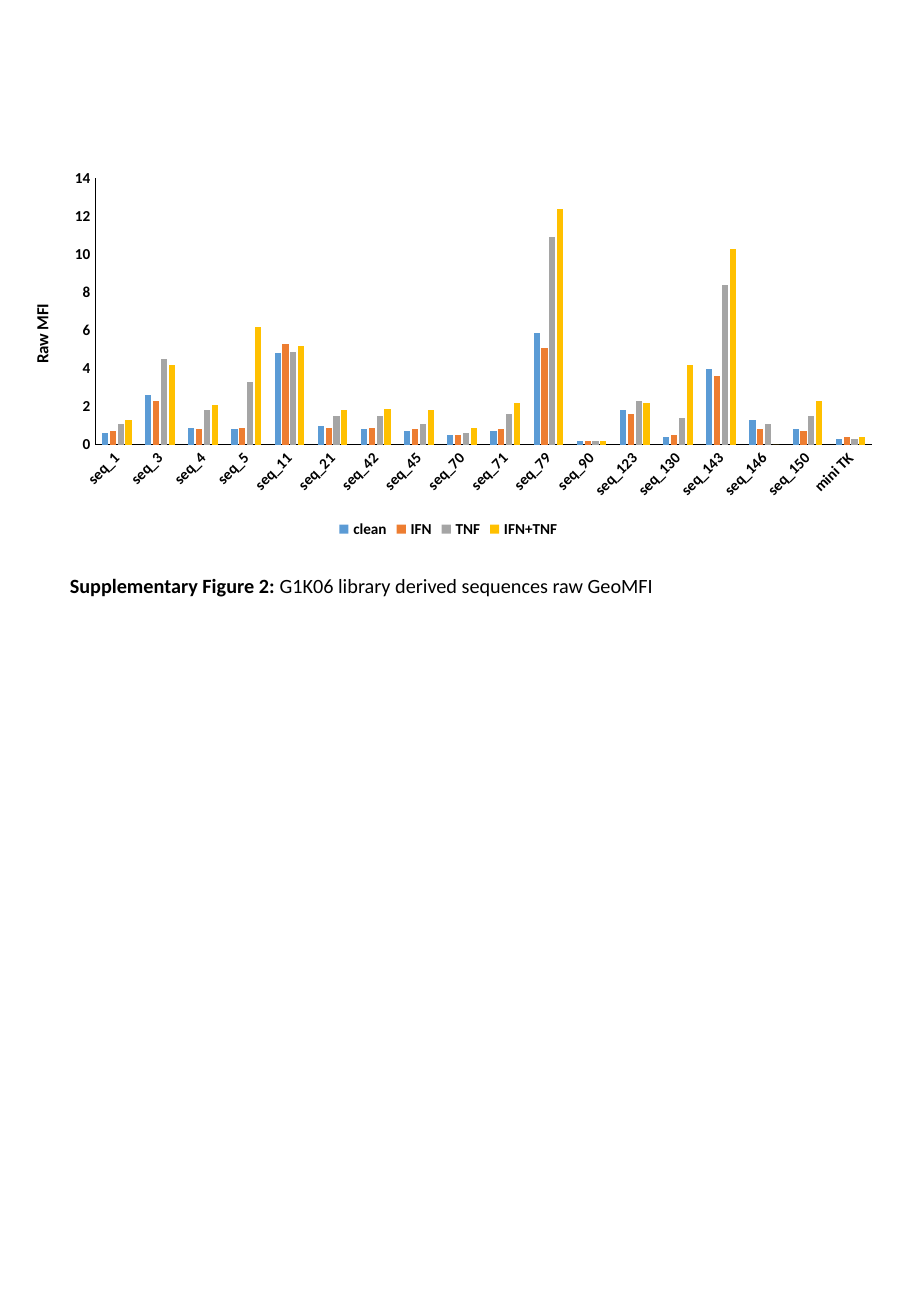
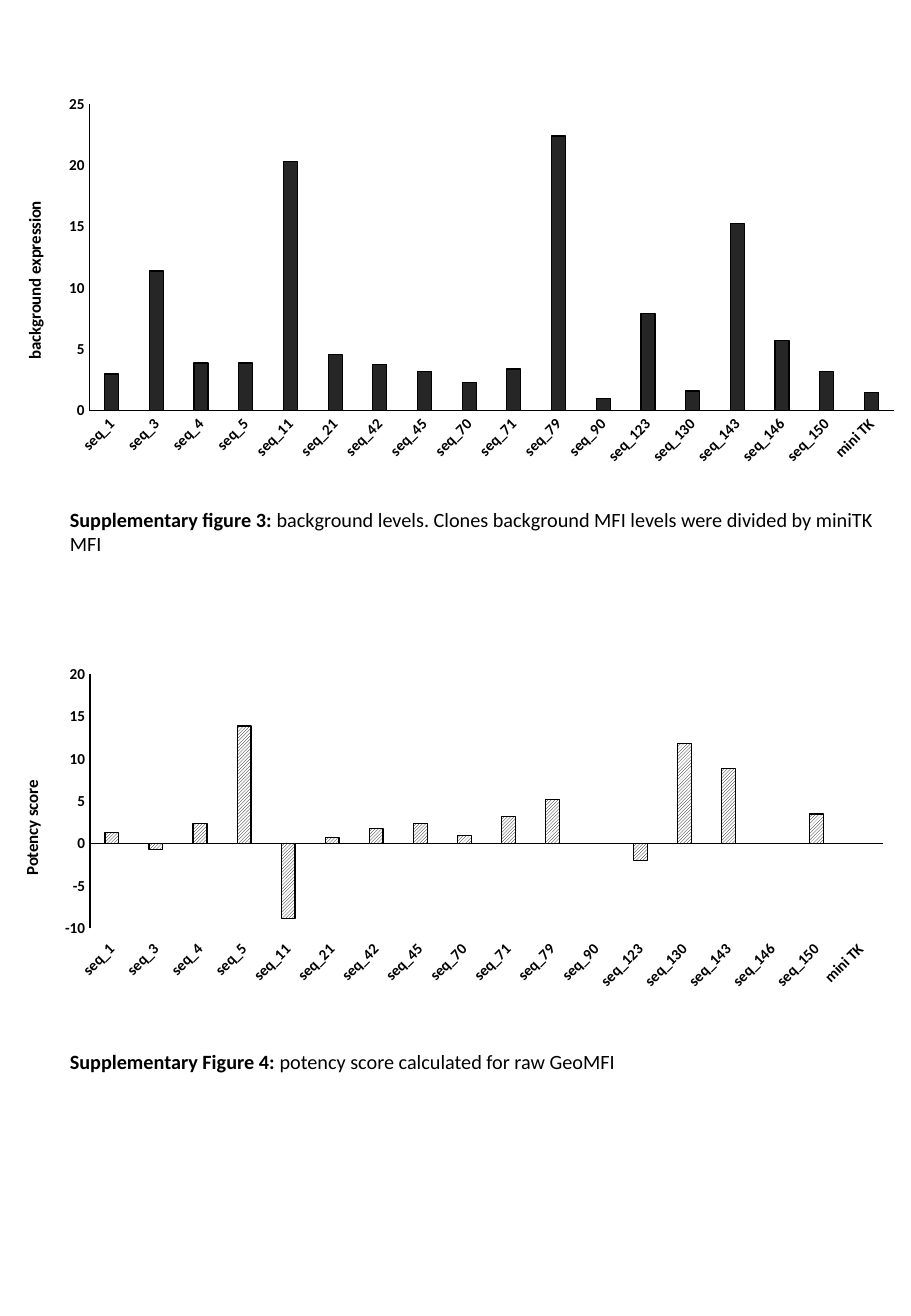
"""Build two pages of supplementary figures: clustered column charts with captions."""
from dataclasses import dataclass
from typing import Optional

from lxml import etree
from pptx import Presentation
from pptx import util as u
from pptx.chart.data import CategoryChartData
from pptx.dml.color import RGBColor
from pptx.enum import chart as charts
from pptx.enum import dml, text
from pptx.oxml.ns import qn

FONT = "Calibri"
COLOURS = {
    "ink": "000000",
    "paper": "FFFFFF",
    "charcoal": "262626",
    "blue": "5B9BD5",
    "orange": "ED7D31",
    "grey": "A5A5A5",
    "gold": "FFC000",
}
CLONES = [f"seq_{n}" for n in (1, 3, 4, 5, 11, 21, 42, 45, 70, 71, 79, 90, 123, 130, 143, 146, 150)]
CATEGORIES = CLONES + ["mini TK"]
CAPTION_LEFT = 1.21
TICK_SIZE = 9
AXIS_TITLE_SIZE = 10
CAPTION_SIZE = 12


@dataclass(frozen=True)
class Frame:
    left: float
    top: float
    width: float = 0
    height: float = 0

    def lengths(self) -> list:
        return [u.Cm(v) for v in (self.left, self.top, self.width, self.height)]


@dataclass(frozen=True)
class Series:
    name: str
    values: tuple
    colour: str
    outlined: bool = False
    hatched: bool = False


@dataclass(frozen=True)
class Scale:
    low: float
    high: float
    step: float


@dataclass(frozen=True)
class Figure:
    label: str
    caption: str
    caption_frame: Frame
    chart_frame: Frame
    plot_frame: Frame
    axis_title: str
    title_frame: Frame
    scale: Scale
    series: tuple
    legend: bool = False
    labels_low: bool = False


PAGES = [
    [
        Figure(
            "Supplementary Figure 2: ", "G1K06 library derived sequences raw GeoMFI",
            Frame(CAPTION_LEFT, 11.87, 13.72, 0.76),
            Frame(0.14, 3.37, 18.47, 7.98), Frame(1.99, 3.73, 16.25, 5.57),
            "Raw MFI", Frame(0.59, 6.29), Scale(0, 14, 2),
            (
                Series("clean", (0.6, 2.6, 0.9, 0.8, 4.8, 1, 0.8, 0.7, 0.5, 0.7, 5.9, 0.2,
                                 1.8, 0.4, 4, 1.3, 0.8, 0.3), "blue"),
                Series("IFN", (0.7, 2.3, 0.8, 0.9, 5.3, 0.9, 0.9, 0.8, 0.5, 0.8, 5.1, 0.2,
                               1.6, 0.5, 3.6, 0.8, 0.7, 0.4), "orange"),
                Series("TNF", (1.1, 4.5, 1.8, 3.3, 4.9, 1.5, 1.5, 1.1, 0.6, 1.6, 10.9, 0.2,
                               2.3, 1.4, 8.4, 1.1, 1.5, 0.3), "grey"),
                Series("IFN+TNF", (1.3, 4.2, 2.1, 6.2, 5.2, 1.8, 1.9, 1.8, 0.9, 2.2, 12.4, 0.2,
                                   2.2, 4.2, 10.3, 0, 2.3, 0.4), "gold"),
            ),
            legend=True,
        ),
    ],
    [
        Figure(
            "Supplementary figure 3: ",
            "background levels. Clones background MFI levels were divided by miniTK MFI",
            Frame(CAPTION_LEFT, 10.48, 17.4, 1.27),
            Frame(0, 1.83, 19.05, 8.08), Frame(1.87, 2.18, 16.82, 6.41),
            "background expression", Frame(0.43, 4.14), Scale(0, 25, 5),
            (
                Series("Series 1", (3, 11.4, 3.9, 3.9, 20.3, 4.6, 3.8, 3.2, 2.3, 3.4, 22.4, 1,
                                    7.9, 1.6, 15.3, 5.7, 3.2, 1.5), "charcoal", outlined=True),
            ),
        ),
        Figure(
            "Supplementary Figure 4: ", "potency score calculated for raw GeoMFI",
            Frame(CAPTION_LEFT, 21.82, 15.09, 0.76),
            Frame(-0.08, 13.77, 18.9, 7.06), Frame(1.88, 14.1, 16.58, 5.31),
            "Potency score", Frame(0.37, 16.25), Scale(-10, 20, 5),
            (
                Series("Series 1", (1.3, -0.7, 2.4, 13.9, -8.8, 0.7, 1.8, 2.4, 1, 3.2, 5.2, 0,
                                    -2, 11.8, 8.9, 0, 3.5, 0), "ink", outlined=True, hatched=True),
            ),
            labels_low=True,
        ),
    ],
]


def colour(name: str) -> RGBColor:
    return RGBColor.from_string(COLOURS[name])


def format_font(font, size: float, bold: bool = True) -> None:
    font.name = FONT
    font.size = u.Pt(size)
    font.bold = bold
    font.color.rgb = colour("ink")


def format_line(line) -> None:
    line.color.rgb = colour("ink")
    line.width = u.Pt(0.75)


def add_span(para, words: str, *, size: float, bold: bool) -> None:
    span = para.add_run()
    span.text = words
    format_font(span.font, size, bold)


def add_caption(page, figure: Figure) -> None:
    box = page.shapes.add_textbox(*figure.caption_frame.lengths())
    box.text_frame.word_wrap = True
    box.text_frame.auto_size = text.MSO_AUTO_SIZE.SHAPE_TO_FIT_TEXT
    para = box.text_frame.paragraphs[0]
    add_span(para, figure.label, size=CAPTION_SIZE, bold=True)
    add_span(para, figure.caption, size=CAPTION_SIZE, bold=False)


def place(parent, index: int, frame: Frame, within: Frame, target: Optional[str] = None) -> None:
    for old in parent.findall(qn("c:layout")):
        parent.remove(old)
    layout = etree.Element(qn("c:layout"))
    manual = etree.SubElement(layout, qn("c:manualLayout"))
    settings = {"layoutTarget": target} if target else {}
    settings |= {"xMode": "edge", "yMode": "edge"}
    settings["x"] = (frame.left - within.left) / within.width
    settings["y"] = (frame.top - within.top) / within.height
    if frame.width:
        settings["w"] = frame.width / within.width
        settings["h"] = frame.height / within.height
    for tag, value in settings.items():
        etree.SubElement(manual, qn(f"c:{tag}")).set("val", str(value))
    parent.insert(index, layout)


def rotate(body, degrees: int) -> None:
    body.set("rot", str(degrees * 60000))
    body.set("vert", "horz")


def format_axes(chart, figure: Figure) -> None:
    for axis in (chart.category_axis, chart.value_axis):
        axis.has_major_gridlines = False
        axis.major_tick_mark = axis.minor_tick_mark = charts.XL_TICK_MARK.NONE
        format_font(axis.tick_labels.font, TICK_SIZE)
        format_line(axis.format.line)
    if figure.labels_low:
        chart.category_axis.tick_label_position = charts.XL_TICK_LABEL_POSITION.LOW
    rotate(chart.element.xpath(".//c:catAx/c:txPr/a:bodyPr")[0], -45)

    axis = chart.value_axis
    axis.minimum_scale = figure.scale.low
    axis.maximum_scale = figure.scale.high
    axis.major_unit = figure.scale.step
    para = axis.axis_title.text_frame.paragraphs[0]
    add_span(para, figure.axis_title, size=AXIS_TITLE_SIZE, bold=True)
    title = chart.element.xpath(".//c:valAx/c:title")[0]
    rotate(title.xpath(".//a:bodyPr")[0], -90)
    place(title, 1, figure.title_frame, figure.chart_frame)


def format_series(columns, series: Series) -> None:
    columns.invert_if_negative = False
    fill = columns.format.fill
    if series.hatched:
        fill.patterned()
        fill.pattern = dml.MSO_PATTERN.LIGHT_UPWARD_DIAGONAL
        fill.fore_color.rgb = colour(series.colour)
        fill.back_color.rgb = colour("paper")
    else:
        fill.solid()
        fill.fore_color.rgb = colour(series.colour)
    if series.outlined:
        format_line(columns.format.line)
    else:
        columns.format.line.fill.background()


def add_column_chart(page, figure: Figure) -> None:
    data = CategoryChartData()
    data.categories = CATEGORIES
    for series in figure.series:
        data.add_series(series.name, series.values)
    chart = page.shapes.add_chart(
        charts.XL_CHART_TYPE.COLUMN_CLUSTERED, *figure.chart_frame.lengths(), data
    ).chart
    chart.has_title = False
    format_font(chart.font, AXIS_TITLE_SIZE)
    chart.has_legend = figure.legend
    if figure.legend:
        chart.legend.position = charts.XL_LEGEND_POSITION.BOTTOM
        chart.legend.include_in_layout = False
        format_font(chart.legend.font, TICK_SIZE)
    plot = chart.plots[0]
    plot.gap_width = 219
    plot.overlap = -27
    plot.vary_by_categories = False
    for columns, series in zip(plot.series, figure.series):
        format_series(columns, series)
    format_axes(chart, figure)
    area = chart.element.xpath(".//c:plotArea")[0]
    place(area, 0, figure.plot_frame, figure.chart_frame, "inner")


def main() -> None:
    deck = Presentation()
    deck.slide_width = u.Cm(19.05)
    deck.slide_height = u.Cm(27.51)
    blank = deck.slide_layouts.get_by_name("Blank")
    for figures in PAGES:
        page = deck.slides.add_slide(blank)
        for figure in figures:
            add_column_chart(page, figure)
            add_caption(page, figure)
    deck.save("out.pptx")


if __name__ == "__main__":
    main()
